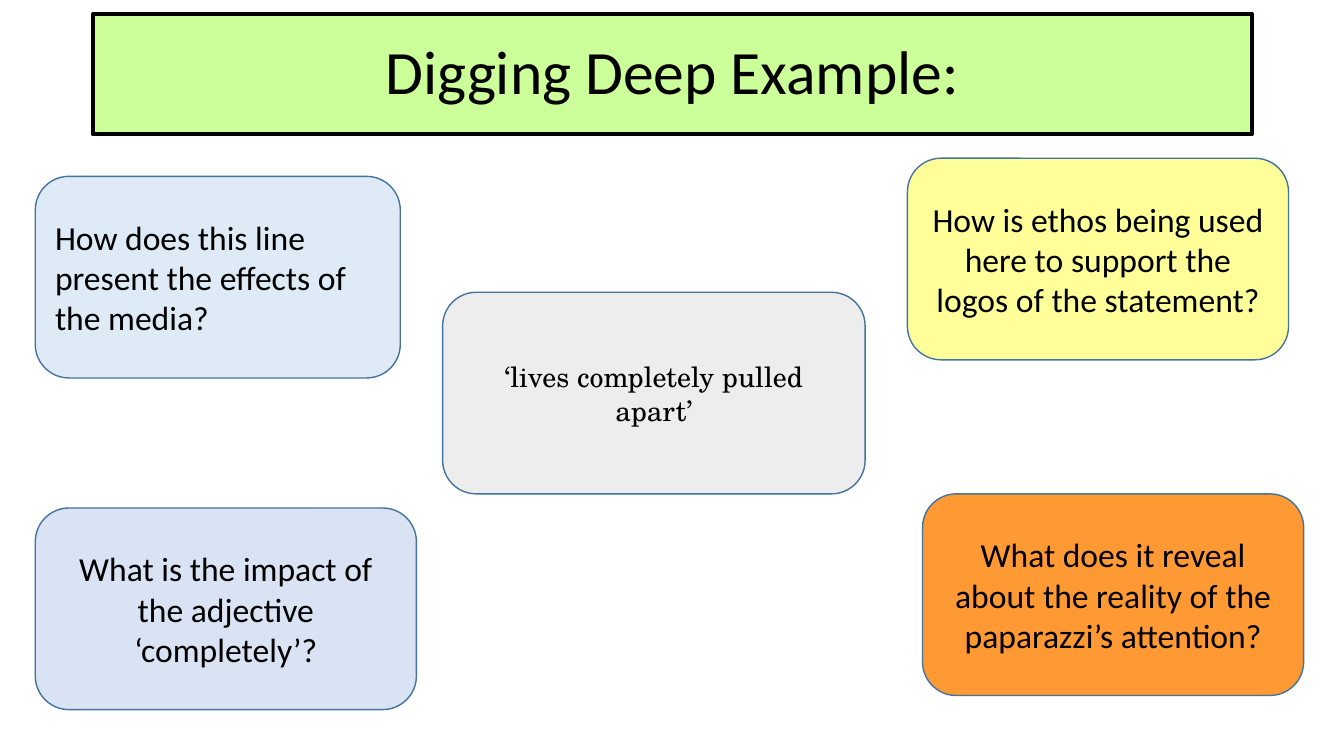
from dataclasses import dataclass

from pptx import Presentation
from pptx import util as u
from pptx.dml import color
from pptx.enum import shapes, text

WIDTH, HEIGHT = 13.33, 7.5
CARD_HEIGHT = 2 / HEIGHT


@dataclass(frozen=True)
class Theme:
    """Hold the colours, fonts and sizes of the slide."""
    ink: str = "000000"
    outline: str = "43739E"
    banner: str = "CCFF99"
    quote: str = "EDEDED"
    sky: str = "DEEBF7"
    lavender: str = "DAE3F3"
    yellow: str = "FFFF99"
    orange: str = "FF9933"
    body_font: str = "Calibri"
    quote_font: str = "TeX Gyre Schola"
    title_size: int = 44
    question_size: int = 24
    quote_size: int = 20


THEME = Theme()
CENTER, LEFT = text.PP_ALIGN.CENTER, text.PP_ALIGN.LEFT

QUESTIONS = [
    ("How does this line present the effects of the media?",
     (0.35, 1.75, 3.62), THEME.sky, LEFT),
    ("What is the impact of the adjective ‘completely’?",
     (0.35, 5.04, 3.78), THEME.lavender, CENTER),
    ("How is ethos being used here to support the logos of the statement?",
     (9, 1.57, 3.78), THEME.yellow, CENTER),
    ("What does it reveal about the reality of the paparazzi’s attention?",
     (9.15, 4.9, 3.78), THEME.orange, CENTER),
]


def apply(target, values):
    """Set each named attribute of the target."""
    for name, value in values.items():
        setattr(target, name, value)


def place(shape, box):
    """Move the shape to a box given as shares of the slide."""
    left, top, width, height = box
    apply(shape, {"left": u.Inches(left * WIDTH), "top": u.Inches(top * HEIGHT),
                  "width": u.Inches(width * WIDTH), "height": u.Inches(height * HEIGHT)})


def paint(shape, fill, line, weight):
    """Give the shape a solid fill and outline."""
    shape.fill.solid()
    shape.fill.fore_color.rgb = color.RGBColor.from_string(fill)
    shape.line.color.rgb = color.RGBColor.from_string(line)
    shape.line.width = u.Pt(weight)


def write(shape, wording, font, size, align=CENTER, spacing=1.0):
    """Write one vertically centred paragraph in the shape."""
    frame = shape.text_frame
    apply(frame, {"word_wrap": True, "auto_size": text.MSO_AUTO_SIZE.NONE,
                  "vertical_anchor": text.MSO_ANCHOR.MIDDLE})
    para = frame.paragraphs[0]
    apply(para, {"alignment": align, "line_spacing": spacing})
    span = para.add_run()
    span.text = wording
    apply(span.font, {"name": font, "size": u.Pt(size)})
    span.font.color.rgb = color.RGBColor.from_string(THEME.ink)


def add_banner(page, box, wording):
    """Format the title placeholder as a framed banner."""
    title = page.shapes.title
    place(title, box)
    paint(title, THEME.banner, THEME.ink, 3)
    write(title, wording, THEME.body_font, THEME.title_size, spacing=0.9)


def add_card(page, box, wording, fill, font, size, align=CENTER):
    """Add a rounded card holding centred or left-aligned text."""
    card = page.shapes.add_shape(shapes.MSO_SHAPE.ROUNDED_RECTANGLE, 0, 0, 0, 0)
    card.shadow.inherit = False
    place(card, box)
    paint(card, fill, THEME.outline, 1)
    write(card, wording, font, size, align)


def card_box(left, top, width):
    """Return the slide shares of a card measured in inches."""
    return left / WIDTH, top / HEIGHT, width / WIDTH, CARD_HEIGHT


def main():
    """Build and save the slide."""
    deck = Presentation()
    apply(deck, {"slide_width": u.Inches(WIDTH), "slide_height": u.Inches(HEIGHT)})
    page = deck.slides.add_slide(deck.slide_layouts[5])
    add_banner(page, (0.92 / WIDTH, 0.14 / HEIGHT, 11.5 / WIDTH, 1.19 / HEIGHT),
               "Digging Deep Example:")
    add_card(page, card_box(4.39, 2.9, 4.19), "‘lives completely pulled apart’",
             THEME.quote, THEME.quote_font, THEME.quote_size)
    for wording, spot, fill, align in QUESTIONS:
        add_card(page, card_box(*spot), wording, fill,
                 THEME.body_font, THEME.question_size, align)
    deck.save("out.pptx")


if __name__ == "__main__":
    main()
